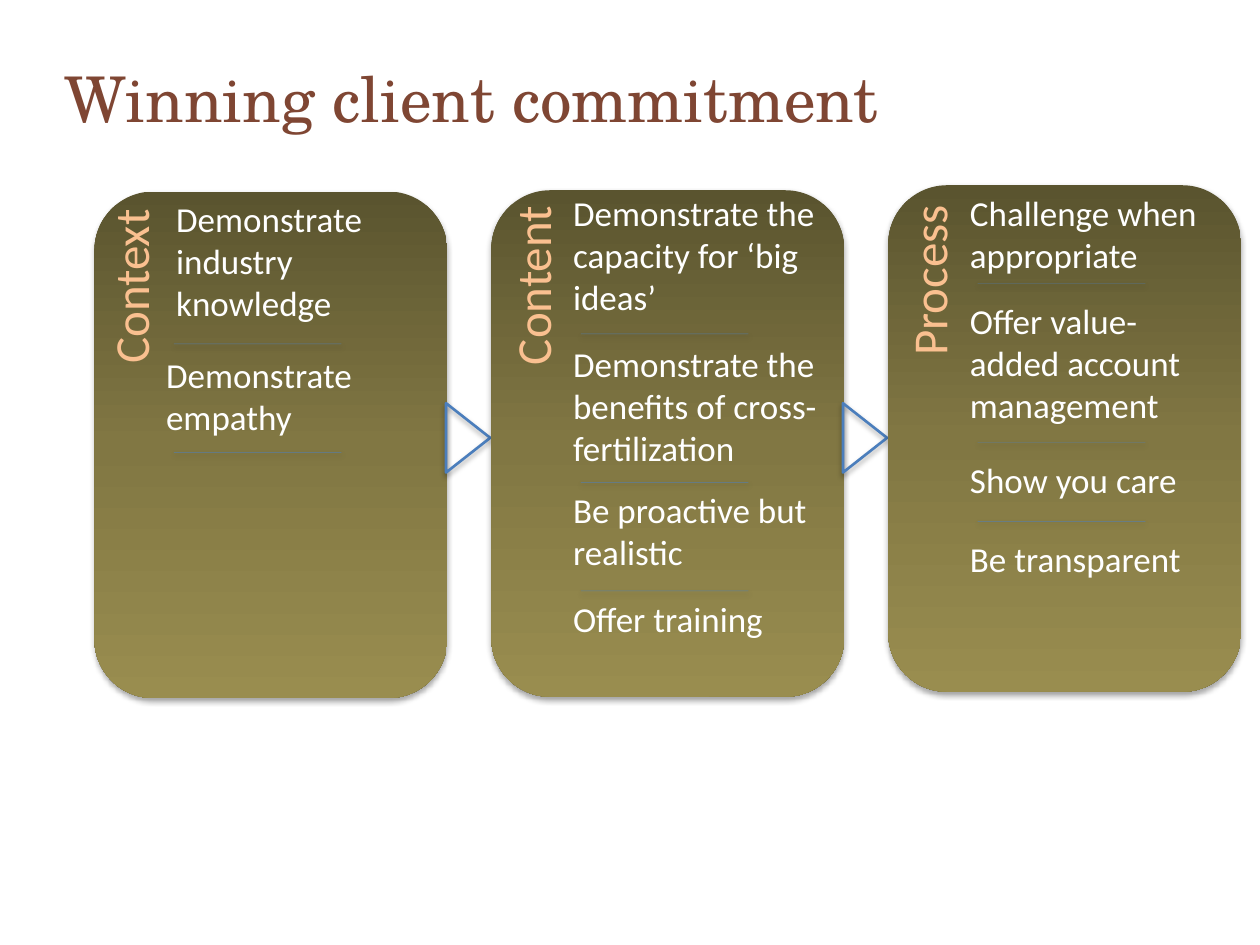
from dataclasses import dataclass

import pptx
import pptx.dml.color
import pptx.enum.shapes
import pptx.enum.text
import pptx.oxml
import pptx.oxml.ns
import pptx.util
from pptx.util import Inches

NS = pptx.oxml.ns.nsdecls("a")


@dataclass(frozen=True)
class Theme:
    """Hold the colours, fonts and type sizes of the slide."""
    title_font: str = "TeX Gyre Schola"
    body_font: str = "Calibri"
    title_size: int = 36
    heading_size: int = 28
    body_size: int = 20
    title: str = "7F4633"
    heading: str = "FAC090"
    body: str = "FFFFFF"
    rule: str = "4F81BD"
    arrow: str = "4B7EBC"
    gradient: tuple = ("5A542F", "817743", "998D4F")


THEME = Theme()


def rgb(value):
    """Turn a hex string into a colour."""
    return pptx.dml.color.RGBColor.from_string(value)


def add_run(p, text, font, size, color):
    """Add one formatted run to a paragraph."""
    r = p.add_run()
    r.text = text
    r.font.name = font
    r.font.size = pptx.util.Pt(size)
    r.font.color.rgb = rgb(color)


def add_shadow(sp, alpha, dist):
    """Give a shape a soft shadow that falls straight down."""
    sp._element.spPr.append(pptx.oxml.parse_xml(
        f'<a:effectLst {NS}><a:outerShdw blurRad="{pptx.util.Pt(3.1)}" '
        f'dist="{pptx.util.Pt(dist)}" dir="5400000" rotWithShape="0">'
        f'<a:srgbClr val="000000"><a:alpha val="{alpha * 1000}"/></a:srgbClr>'
        '</a:outerShdw></a:effectLst>'))


def fill_gradient(sp, colors):
    """Fill a shape with evenly spaced colours from top to bottom."""
    step = 100000 // (len(colors) - 1)
    stops = "".join(f'<a:gs pos="{i * step}"><a:srgbClr val="{c}"/></a:gs>'
                    for i, c in enumerate(colors))
    sp.fill.background()
    spPr = sp._element.spPr
    spPr.replace(spPr.find(pptx.oxml.ns.qn("a:noFill")), pptx.oxml.parse_xml(
        f'<a:gradFill {NS} rotWithShape="1"><a:gsLst>{stops}</a:gsLst>'
        '<a:lin ang="5400000" scaled="0"/></a:gradFill>'))


def add_text(s, box, text, size, color, wrap=True):
    """Add a text box with a single run."""
    sp = s.shapes.add_textbox(*map(Inches, box))
    tf = sp.text_frame
    tf.word_wrap = wrap
    tf.auto_size = pptx.enum.text.MSO_AUTO_SIZE.SHAPE_TO_FIT_TEXT
    add_run(tf.paragraphs[0], text, THEME.body_font, size, color)
    return sp


def add_rule(s, x, y, width):
    """Draw a thin divider between two items."""
    sp = s.shapes.add_connector(pptx.enum.shapes.MSO_CONNECTOR.STRAIGHT,
                                Inches(x), Inches(y), Inches(x + width), Inches(y))
    sp.line.color.rgb = rgb(THEME.rule)
    sp.line.width = pptx.util.Pt(0.25)
    color = sp._element.spPr.find(".//" + pptx.oxml.ns.qn("a:srgbClr"))
    color.append(pptx.oxml.parse_xml(f'<a:alpha {NS} val="80000"/>'))
    add_shadow(sp, 38, 1.6)


def add_title(s, box, text):
    """Place the slide title in its placeholder."""
    sp = s.shapes.title
    sp.left, sp.top, sp.width, sp.height = map(Inches, box)
    tf = sp.text_frame
    tf.margin_left = tf.margin_top = tf.margin_right = tf.margin_bottom = 0
    tf.vertical_anchor = pptx.enum.text.MSO_ANCHOR.TOP
    tf.auto_size = pptx.enum.text.MSO_AUTO_SIZE.NONE
    p = tf.paragraphs[0]
    p.alignment = pptx.enum.text.PP_ALIGN.LEFT
    p.line_spacing = pptx.util.Pt(42)
    add_run(p, text, THEME.title_font, THEME.title_size, THEME.title)


def add_panel(s, box, heading, heading_box, items, rules, rule_x):
    """Draw a rounded panel with a sideways heading, items and dividers."""
    x, y, _, _ = box
    sp = s.shapes.add_shape(pptx.enum.shapes.MSO_SHAPE.ROUNDED_RECTANGLE,
                            *map(Inches, box))
    fill_gradient(sp, THEME.gradient)
    sp.line.fill.background()
    add_shadow(sp, 35, 1.8)
    for rule_y in rules:
        add_rule(s, x + rule_x, y + rule_y, 1.33)
    dx, dy, width, height = heading_box
    label = add_text(s, (x + dx, y + dy, width, height), heading,
                     THEME.heading_size, THEME.heading, wrap=False)
    label.rotation = 270
    for dx, dy, width, lines, text in items:
        add_text(s, (x + dx, y + dy, width, 0.1 + 0.34 * lines), text,
                 THEME.body_size, THEME.body)


def add_arrow(s, box):
    """Draw an outlined triangle that points to the next panel."""
    sp = s.shapes.add_shape(pptx.enum.shapes.MSO_SHAPE.ISOSCELES_TRIANGLE,
                            *map(Inches, box))
    sp.rotation = 90
    sp.fill.background()
    sp.line.color.rgb = rgb(THEME.arrow)
    sp.line.width = pptx.util.Pt(1.5)
    add_shadow(sp, 35, 1.8)


def main():
    """Build the slide and save it."""
    prs = pptx.Presentation()
    prs.slide_width, prs.slide_height = Inches(10), Inches(7.5)
    s = prs.slides.add_slide(prs.slide_layouts[5])
    add_title(s, (0.51, 0.49, 6.69, 0.67), "Winning client commitment")
    left, pitch, width, height = 0.75, 3.15, 2.8, 4.02
    panels = [
        (1.52, "Context", (-0.44, 0.46, 1.44, 0.57), [
            (0.55, 0, 2.13, 3, "Demonstrate industry knowledge"),
            (0.47, 1.24, 2.2, 2, "Demonstrate empathy"),
        ], (1.21, 2.07), 0.63),
        (1.51, "Content", (-0.42, 0.46, 1.48, 0.57), [
            (0.55, -0.04, 2.2, 3, "Demonstrate the capacity for ‘big ideas’"),
            (0.55, 1.16, 2.2, 3, "Demonstrate the benefits of cross-fertilization"),
            (0.55, 2.32, 2.2, 2, "Be proactive but realistic"),
            (0.55, 3.18, 2.2, 1, "Offer training"),
        ], (1.14, 2.32, 3.18), 0.71),
        (1.47, "Process", (-0.39, 0.46, 1.41, 0.57), [
            (0.55, 0, 2.2, 2, "Challenge when appropriate"),
            (0.55, 0.86, 2.2, 3, "Offer value-added account management"),
            (0.55, 2.12, 2.2, 1, "Show you care"),
            (0.55, 2.75, 2.2, 1, "Be transparent"),
        ], (0.78, 2.04, 2.67), 0.71),
    ]
    for i, (top, *content) in enumerate(panels):
        x = left + i * pitch
        add_panel(s, (x, top, width, height), *content)
        if i < len(panels) - 1:
            add_arrow(s, (x + width - 0.11, 3.3, 0.55, 0.35))
    prs.save("out.pptx")


if __name__ == "__main__":
    main()
